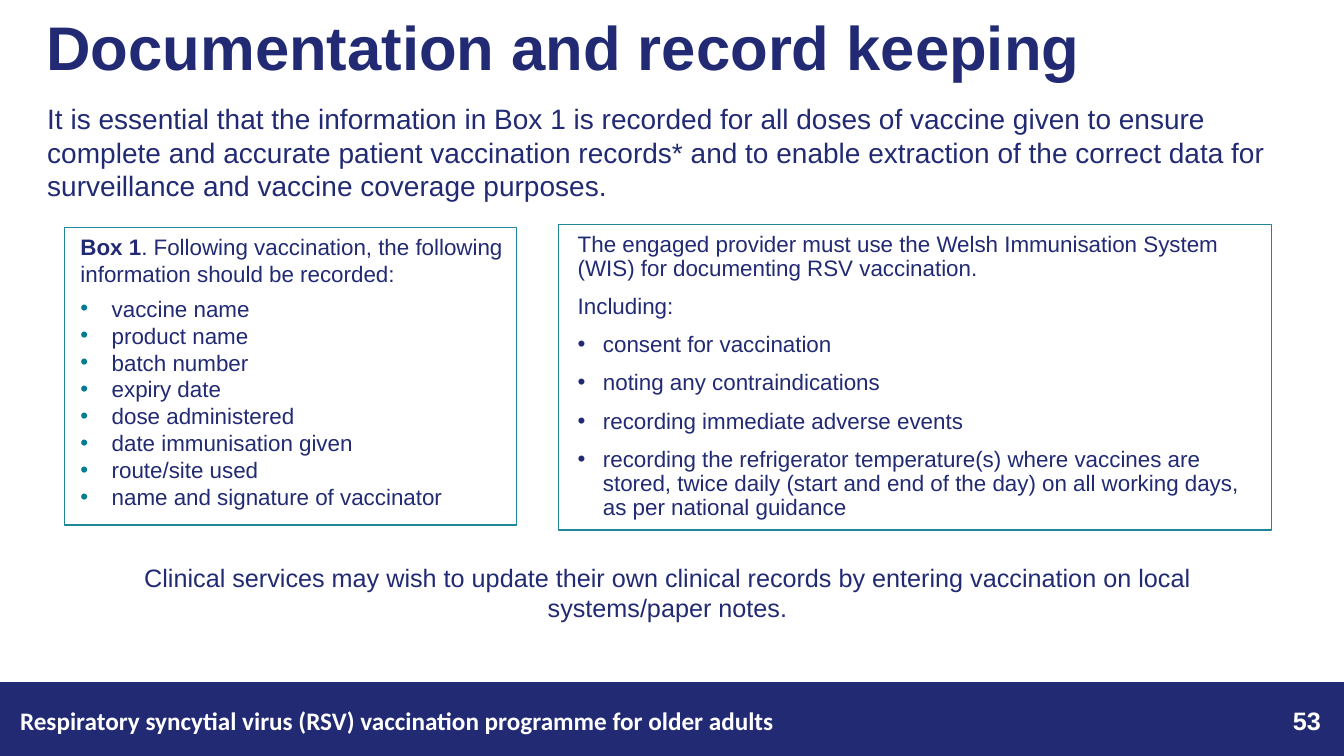
from dataclasses import dataclass

from lxml import etree
from pptx import Presentation
from pptx.dml.color import RGBColor
from pptx.enum.shapes import MSO_SHAPE
from pptx.enum.text import MSO_ANCHOR, MSO_AUTO_SIZE, PP_ALIGN
from pptx.oxml.ns import qn
from pptx.util import Pt

RECTANGLE = MSO_SHAPE.RECTANGLE
TOP = MSO_ANCHOR.TOP
NO_FIT = MSO_AUTO_SIZE.NONE
LEFT, CENTER, RIGHT = PP_ALIGN.LEFT, PP_ALIGN.CENTER, PP_ALIGN.RIGHT
EMU_PER_PX = 9144  # 100 px to the inch


@dataclass(frozen=True)
class Theme:
    navy: str = "212A73"
    teal: str = "007C91"
    frame: str = "1E8898"
    white: str = "FFFFFF"
    font: str = "Arial"
    footer_font: str = "Calibri"
    title_size: int = 44
    intro_size: int = 20
    note_size: int = 18
    box_size: int = 16


THEME = Theme()

RECORDED_ITEMS = [
    "vaccine name",
    "product name",
    "batch number",
    "expiry date",
    "dose administered",
    "date immunisation given",
    "route/site used",
    "name and signature of vaccinator",
]
PROVIDER_LEAD = [
    "The engaged provider must use the Welsh Immunisation System (WIS) "
    "for documenting RSV vaccination.",
    "Including:",
]
PROVIDER_ITEMS = [
    "consent for vaccination",
    "noting any contraindications",
    "recording immediate adverse events",
    "recording the refrigerator temperature(s) where vaccines are stored, twice daily "
    "(start and end of the day) on all working days, as per national guidance",
]


def px(length):
    return length * EMU_PER_PX


def place(box, left, top, width, height):
    box.left, box.top, box.width, box.height = map(px, (left, top, width, height))


def prepare_frame(box):
    frame = box.text_frame
    frame.word_wrap = True
    frame.auto_size = NO_FIT
    frame.vertical_anchor = TOP
    return frame


def add_text_box(page, *area):
    return prepare_frame(page.shapes.add_textbox(*map(px, area)))


def add_rectangle(page, *area, fill=None, line):
    shape = page.shapes.add_shape(RECTANGLE, *map(px, area))
    shape.shadow.inherit = False
    if fill:
        shape.fill.solid()
        shape.fill.fore_color.rgb = RGBColor.from_string(fill)
    else:
        shape.fill.background()
    shape.line.color.rgb = RGBColor.from_string(line)
    shape.line.width = Pt(1)


def add_para(frame, before=0, spacing=1.0, align=LEFT):
    """Use the empty first paragraph, or append a further one."""
    first = frame.paragraphs[0]
    para = frame.add_paragraph() if first.runs else first
    para.alignment = align
    para.line_spacing = spacing
    para.space_before = Pt(before if para is not first else 0)
    para.space_after = Pt(0)
    return para


def add_span(para, text, size, color=THEME.navy, bold=False, font=THEME.font):
    span = para.add_run()
    span.text = text
    span.font.name = font
    span.font.size = Pt(size)
    span.font.bold = bold
    span.font.color.rgb = RGBColor.from_string(color)


def set_bullet(para, indent=0, color=None):
    """Hang a bullet by the indent; without an indent, switch bullets off."""
    props = para._p.get_or_add_pPr()
    props.set("marL", str(px(indent)))
    props.set("indent", str(-px(indent)))
    if not indent:
        etree.SubElement(props, qn("a:buNone"))
        return
    if color:
        holder = etree.SubElement(props, qn("a:buClr"))
        etree.SubElement(holder, qn("a:srgbClr"), val=color)
    etree.SubElement(props, qn("a:buFont"), typeface=THEME.font)
    etree.SubElement(props, qn("a:buChar"), char="•")


def fill_title(page):
    title = page.shapes.title
    place(title, 36, 12, 1150, 106)
    para = add_para(prepare_frame(title), spacing=0.9)
    add_span(para, "Documentation and record keeping", THEME.title_size, bold=True)


def fill_provider_list(page):
    body = page.placeholders[1]
    place(body, 563, 226, 688, 355)
    frame = prepare_frame(body)
    rows = [(text, 0) for text in PROVIDER_LEAD] + [(text, 25) for text in PROVIDER_ITEMS]
    for text, indent in rows:
        para = add_para(frame, before=10, spacing=0.9)
        set_bullet(para, indent)
        add_span(para, text, THEME.box_size)


def add_recorded_list(page):
    frame = add_text_box(page, 70, 226, 444, 318)
    lead = add_para(frame)
    add_span(lead, "Box 1", THEME.box_size, bold=True)
    add_span(lead, ". Following vaccination, the following information should be recorded:",
             THEME.box_size)
    for number, item in enumerate(RECORDED_ITEMS):
        para = add_para(frame, before=0 if number else 6)
        set_bullet(para, 31, THEME.teal)
        add_span(para, item, THEME.box_size)


def add_label(page, area, text, size, align=LEFT, **style):
    para = add_para(add_text_box(page, *area), align=align)
    add_span(para, text, size, **style)


def main():
    deck = Presentation()
    deck.slide_width, deck.slide_height = px(1333), px(750)
    page = deck.slides.add_slide(deck.slide_layouts[1])

    # Heading and introduction
    fill_title(page)
    add_label(page, (37, 96, 1261, 145),
              "It is essential that the information in Box 1 is recorded for all doses of "
              "vaccine given to ensure complete and accurate patient vaccination records* "
              "and to enable extraction of the correct data for surveillance and vaccine "
              "coverage purposes.", THEME.intro_size)

    # Two framed lists
    fill_provider_list(page)
    add_recorded_list(page)
    add_rectangle(page, 64, 226, 448, 295, line=THEME.frame)
    add_rectangle(page, 554, 223, 707, 303, line=THEME.frame)

    # Closing note
    add_label(page, (64, 553, 1196, 71),
              "Clinical services may wish to update their own clinical records by entering "
              "vaccination on local systems/paper notes.", THEME.note_size, CENTER)

    # Footer band
    add_rectangle(page, 0, 677, 1333, 73, fill=THEME.navy, line=THEME.navy)
    add_label(page, (10, 695, 1031, 44),
              "Respiratory syncytial virus (RSV) vaccination programme for older adults",
              THEME.note_size, color=THEME.white, bold=True, font=THEME.footer_font)
    add_label(page, (1186, 695, 134, 41), "53", THEME.note_size, RIGHT,
              color=THEME.white, bold=True)

    deck.save("out.pptx")


if __name__ == "__main__":
    main()
